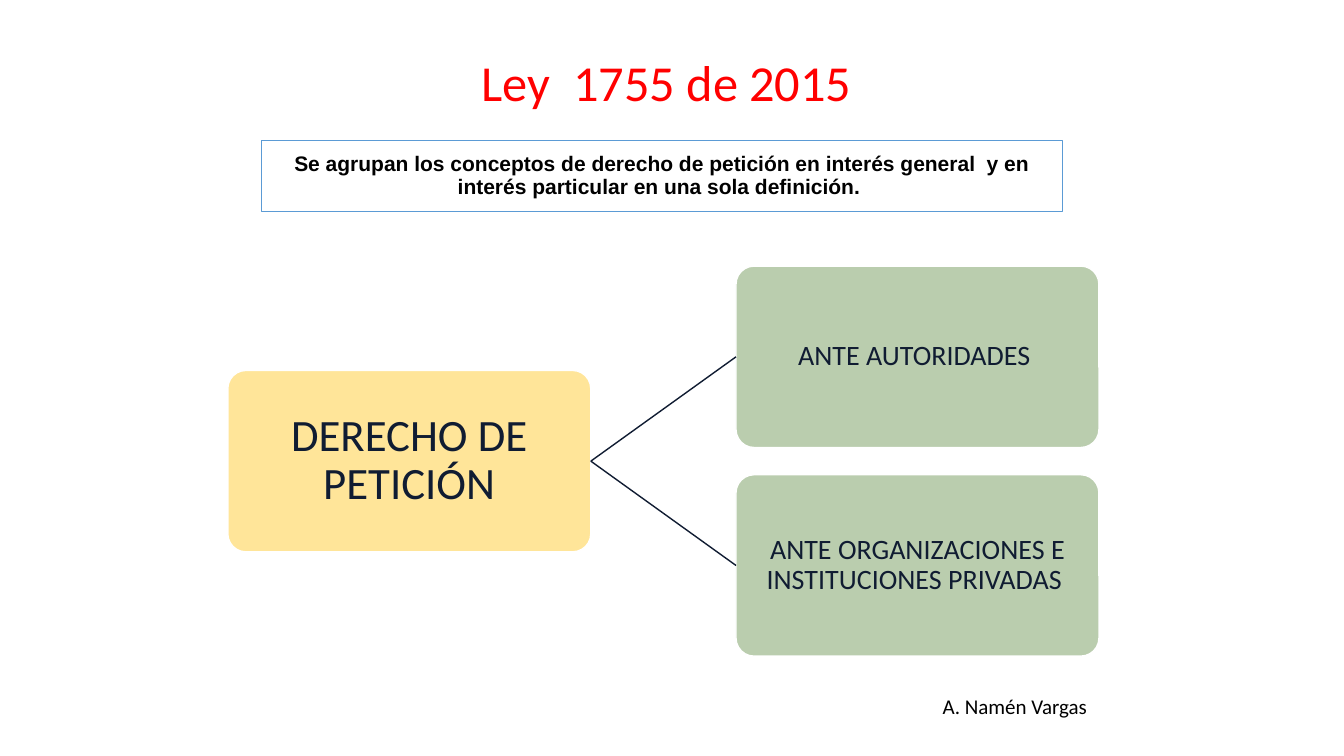
from dataclasses import dataclass

from lxml import etree
from pptx import Presentation
from pptx.dml.color import RGBColor
from pptx.enum import shapes, text
from pptx.oxml.ns import qn
from pptx.util import Inches, Pt

TITLE = "Ley  1755 de 2015 "
DEFINITION = (
    "Se agrupan los conceptos de derecho de petición en interés general  y en "
    "interés particular en una sola definición. "
)
RIGHT = "DERECHO DE PETICIÓN"
ADDRESSEES = ["ANTE AUTORIDADES ", "ANTE ORGANIZACIONES E INSTITUCIONES PRIVADAS "]
AUTHOR = "A. Namén Vargas"


@dataclass(frozen=True)
class Theme:
    body_font: str = "Calibri"
    definition_font: str = "Arial"
    title: str = "FF0000"
    ink: str = "101C32"
    black: str = "000000"
    white: str = "FFFFFF"
    border: str = "5B9BD5"
    root_fill: str = "FFC000"
    branch_fill: str = "548235"
    opacity: int = 40
    title_size: int = 36
    root_size: int = 32
    branch_size: int = 20
    small_size: int = 15


theme = Theme()
NODE_W, NODE_H = 3.6, 1.8
ROOT_LEFT, BRANCH_LEFT = 2.26, 7.3
BRANCH_TOP, BRANCH_STEP = 2.64, 2.07


def write(shape, words, size, color, font=theme.body_font, bold=False,
          centred=True, margins=(0.1, 0.05, 0.1, 0.05)):
    frame = shape.text_frame
    frame.text = words
    frame.word_wrap = True
    frame.vertical_anchor = text.MSO_ANCHOR.MIDDLE
    frame.margin_left, frame.margin_top, frame.margin_right, frame.margin_bottom = map(Inches, margins)
    line = frame.paragraphs[0]
    line.alignment = text.PP_ALIGN.CENTER if centred else text.PP_ALIGN.LEFT
    line.line_spacing = 0.9 if centred else 1.0
    style = line.runs[0].font
    style.name, style.size, style.bold = font, Pt(size), bold
    style.color.rgb = RGBColor.from_string(color)


def add_node(slide, words, left, top, fill, size):
    node = slide.shapes.add_shape(shapes.MSO_SHAPE.ROUNDED_RECTANGLE,
                                  *map(Inches, (left, top, NODE_W, NODE_H)))
    node.shadow.inherit = False
    node.adjustments[0] = 0.1
    node.fill.solid()
    node.fill.fore_color.rgb = RGBColor.from_string(fill)
    tint = node.fill._xPr.find(qn("a:solidFill"))[0]
    etree.SubElement(tint, qn("a:alpha")).set("val", str(theme.opacity * 1000))
    node.line.color.rgb = RGBColor.from_string(theme.white)
    node.line.width = Pt(1)
    write(node, words, size, theme.ink, margins=(0.02,) * 4)
    return node


def join(slide, root, branch):
    link = slide.shapes.add_connector(shapes.MSO_CONNECTOR.STRAIGHT, 0, 0, 0, 0)
    link.begin_connect(root, 3)
    link.end_connect(branch, 1)
    link.line.color.rgb = RGBColor.from_string(theme.ink)
    link.line.width = Pt(1)
    etree.SubElement(link._element.spPr, qn("a:effectLst"))


def main():
    deck = Presentation()
    deck.slide_width, deck.slide_height = Inches(13.33), Inches(7.5)
    slide = deck.slides.add_slide(deck.slide_layouts[6])

    title = slide.shapes.add_textbox(*map(Inches, (0.92, 0.4, 11.5, 1.45)))
    write(title, TITLE, theme.title_size, theme.title, margins=(0.1, 0.18, 0.1, 0.05))
    title.text_frame.vertical_anchor = text.MSO_ANCHOR.TOP

    root_top = BRANCH_TOP + BRANCH_STEP * (len(ADDRESSEES) - 1) / 2
    root = add_node(slide, RIGHT, ROOT_LEFT, root_top, theme.root_fill, theme.root_size)
    for row, addressee in enumerate(ADDRESSEES):
        branch = add_node(slide, addressee, BRANCH_LEFT, BRANCH_TOP + row * BRANCH_STEP,
                          theme.branch_fill, theme.branch_size)
        join(slide, root, branch)

    definition = slide.shapes.add_shape(shapes.MSO_SHAPE.RECTANGLE,
                                        *map(Inches, (2.59, 1.39, 7.95, 0.71)))
    definition.shadow.inherit = False
    definition.fill.background()
    definition.line.color.rgb = RGBColor.from_string(theme.border)
    definition.line.width = Pt(0.75)
    write(definition, DEFINITION, theme.small_size, theme.black,
          theme.definition_font, bold=True, margins=(0, 0.17, 0, 0.17))

    author = slide.shapes.add_textbox(*map(Inches, (9.25, 6.83, 2.17, 0.35)))
    write(author, AUTHOR, theme.small_size, theme.black, centred=False)

    deck.save("out.pptx")


if __name__ == "__main__":
    main()
